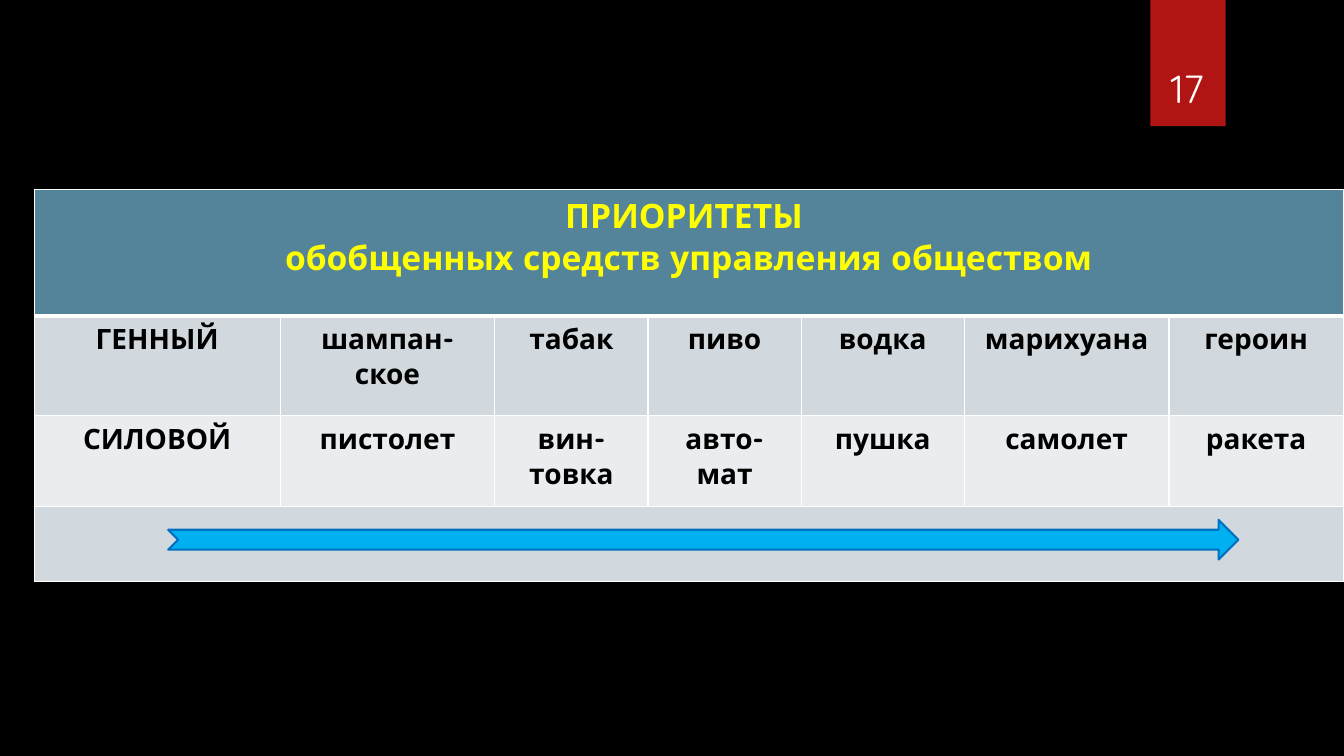
from lxml.etree import SubElement
from pptx import Presentation
from pptx.dml.color import RGBColor
from pptx.enum.shapes import MSO_SHAPE
from pptx.enum.text import MSO_ANCHOR, PP_ALIGN
from pptx.oxml.ns import qn
from pptx.util import Cm, Pt

BLACK = RGBColor(0x00, 0x00, 0x00)
WHITE = RGBColor(0xFF, 0xFF, 0xFF)
YELLOW = RGBColor(0xFF, 0xFF, 0x00)
RED = RGBColor(0xB0, 0x15, 0x13)
HEADER_BLUE = RGBColor(0x54, 0x84, 0x9A)
DARK_BAND = RGBColor(0xD1, 0xD9, 0xDE)
LIGHT_BAND = RGBColor(0xE9, 0xED, 0xEF)
ARROW_FILL = RGBColor(0x00, 0xB0, 0xF0)
ARROW_LINE = RGBColor(0x00, 0x70, 0xC0)

TITLE = "ПРИОРИТЕТЫ \nобобщенных средств управления обществом"
PRIORITIES = [
    ["ГЕННЫЙ", "шампан-ское", "табак", "пиво", "водка", "марихуана", "героин"],
    ["СИЛОВОЙ", "пистолет", "вин-товка", "авто-мат", "пушка", "самолет", "ракета"],
]
COLUMN_WIDTHS = [6.2, 5.41, 3.86, 3.86, 4.11, 5.16, 4.39]
ROW_HEIGHTS = [3.2, 2.51, 2.29, 1.88]
ROW_FILLS = [HEADER_BLUE, DARK_BAND, LIGHT_BAND, DARK_BAND]


class SlideBuilder:
    font_name = "Quicksand"

    def __init__(self, slide):
        self.slide = slide
        slide.background.fill.solid()
        slide.background.fill.fore_color.rgb = BLACK

    def set_text(self, text_frame, text, size, color, bold=False):
        text_frame.word_wrap = True
        text_frame.text = text
        for paragraph in text_frame.paragraphs:
            paragraph.alignment = PP_ALIGN.CENTER
            font = paragraph.font
            font.name = self.font_name
            font.size = Pt(size)
            font.bold = bold
            font.color.rgb = color

    def shape(self, kind, left, top, width, height, fill, line=None):
        shape = self.slide.shapes.add_shape(
            kind, Cm(left), Cm(top), Cm(width), Cm(height))
        shape.shadow.inherit = False
        shape.fill.solid()
        shape.fill.fore_color.rgb = fill
        if line is None:
            shape.line.fill.background()
        else:
            shape.line.color.rgb = line
            shape.line.width = Pt(1.5)

    def text(self, text, left, top, width, height, size, color):
        box = self.slide.shapes.add_textbox(
            Cm(left), Cm(top), Cm(width), Cm(height))
        box.text_frame.vertical_anchor = MSO_ANCHOR.BOTTOM
        self.set_text(box.text_frame, text, size, color)

    def table(self, left, top, column_widths, row_heights):
        table = self.slide.shapes.add_table(
            len(row_heights), len(column_widths), Cm(left), Cm(top),
            Cm(sum(column_widths)), Cm(sum(row_heights))).table
        for column, width in zip(table.columns, column_widths):
            column.width = Cm(width)
        for row, height in zip(table.rows, row_heights):
            row.height = Cm(height)
        return table

    def cell(self, cell, fill, bottom_width=1):
        """Give a cell its margins, white borders and fill."""
        cell.margin_left = cell.margin_right = Cm(0.33)
        cell.margin_top = cell.margin_bottom = Cm(0.13)
        properties = cell._tc.get_or_add_tcPr()
        for side, width in (("L", 1), ("R", 1), ("T", 1), ("B", bottom_width)):
            border = SubElement(properties, qn(f"a:ln{side}"), w=str(Pt(width)))
            solid = SubElement(border, qn("a:solidFill"))
            SubElement(solid, qn("a:srgbClr"), val=str(WHITE))
        cell.fill.solid()
        cell.fill.fore_color.rgb = fill


def main():
    presentation = Presentation()
    presentation.slide_width = Cm(33.87)
    presentation.slide_height = Cm(19.05)
    builder = SlideBuilder(
        presentation.slides.add_slide(presentation.slide_layouts[6]))

    builder.shape(MSO_SHAPE.RECTANGLE, 28.99, 0, 1.9, 3.18, RED)

    table = builder.table(0.86, 4.77, COLUMN_WIDTHS, ROW_HEIGHTS)
    last_column = len(COLUMN_WIDTHS) - 1
    for row in (0, 3):
        table.cell(row, 0).merge(table.cell(row, last_column))
    for row, fill in enumerate(ROW_FILLS):
        for cell in table.rows[row].cells:
            builder.cell(cell, fill, bottom_width=3 if row == 0 else 1)
    builder.set_text(table.cell(0, 0).text_frame, TITLE, 24, YELLOW, bold=True)
    for row, words in enumerate(PRIORITIES, start=1):
        for column, word in enumerate(words):
            builder.set_text(table.cell(row, column).text_frame, word, 20, BLACK,
                             bold=True)

    builder.shape(MSO_SHAPE.NOTCHED_RIGHT_ARROW, 4.24, 13.1, 26.97, 1,
                  ARROW_FILL, ARROW_LINE)
    builder.text("17", 28.75, 0.81, 2.34, 2.13, 28, WHITE)

    presentation.save("out.pptx")


if __name__ == "__main__":
    main()
